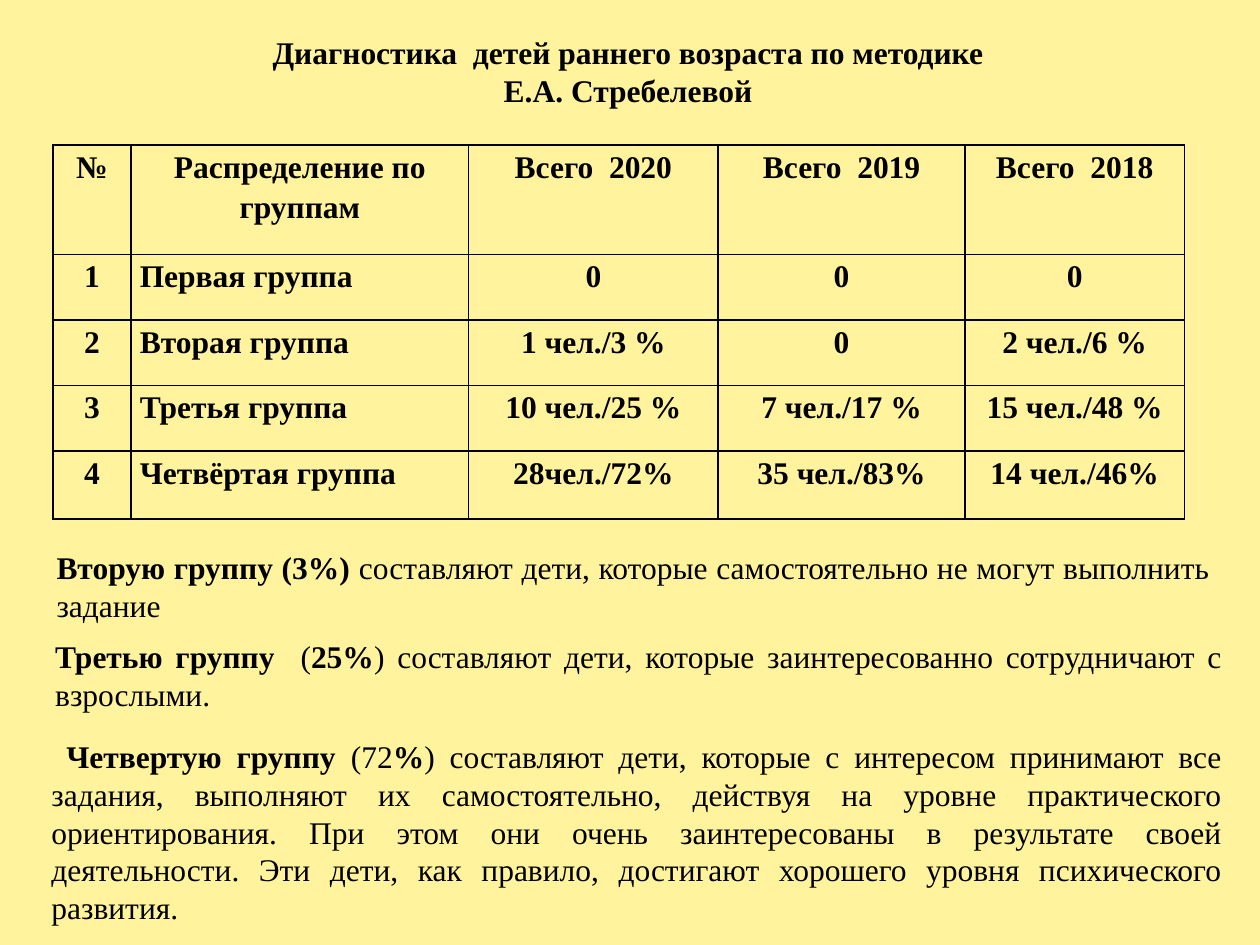
"""Builds a slide with early-childhood diagnostic results by group and year."""
import pptx
import pptx.dml.color
import pptx.enum.text
import pptx.oxml
import pptx.oxml.ns
import pptx.util
from pptx.util import Inches

BACKGROUND = pptx.dml.color.RGBColor(0xFF, 0xF3, 0x9D)
BLACK = pptx.dml.color.RGBColor(0, 0, 0)
FONT = "Times New Roman"
ALIGN = pptx.enum.text.PP_ALIGN
AUTO_SIZE = pptx.enum.text.MSO_AUTO_SIZE


def format_paragraph(paragraph, alignment, bold=None):
    paragraph.alignment = alignment
    paragraph.font.name = FONT
    paragraph.font.size = pptx.util.Pt(18)
    paragraph.font.bold = bold
    paragraph.font.color.rgb = BLACK


def add_borders(cell):
    properties = cell._tc.get_or_add_tcPr()
    for side in ("lnL", "lnR", "lnT", "lnB"):
        properties.append(pptx.oxml.parse_xml(
            f'<a:{side} {pptx.oxml.ns.nsdecls("a")} w="12700"><a:solidFill>'
            f'<a:srgbClr val="{BLACK}"/></a:solidFill></a:{side}>'))


presentation = pptx.Presentation()
presentation.slide_width = Inches(10)
presentation.slide_height = Inches(7.5)
slide = presentation.slides.add_slide(presentation.slide_layouts[5])
slide.background.fill.solid()
slide.background.fill.fore_color.rgb = BACKGROUND

title = slide.shapes.title
title.left, title.top = Inches(0.83), Inches(0.21)
title.width, title.height = Inches(8.31), Inches(0.71)
title.text_frame.text = "Диагностика  детей раннего возраста по методике\nЕ.А. Стребелевой"
title.text_frame.auto_size = AUTO_SIZE.SHAPE_TO_FIT_TEXT
title.text_frame.vertical_anchor = pptx.enum.text.MSO_ANCHOR.MIDDLE
for paragraph in title.text_frame.paragraphs:
    format_paragraph(paragraph, ALIGN.CENTER, True)

rows = [
    ("№", "Распределение по группам", "Всего  2020", "Всего  2019", "Всего  2018"),
    ("1", "Первая группа", "0", "0", "0"),
    ("2", "Вторая группа", "1 чел./3 %", "0", "2 чел./6 %"),
    ("3", "Третья группа", "10 чел./25 %", "7 чел./17 %", "15 чел./48 %"),
    ("4", "Четвёртая группа", "28чел./72%", "35 чел./83%", "14 чел./46%"),
]
column_widths = (0.62, 2.68, 1.98, 1.96, 1.74)
row_heights = (0.87, 0.52, 0.52, 0.52, 0.54)
table = slide.shapes.add_table(
    len(rows), len(column_widths), Inches(0.42), Inches(1.15), Inches(8.98), Inches(2.97)).table
table.horz_banding = False
for column, width in zip(table.columns, column_widths):
    column.width = Inches(width)
for row, height in zip(table.rows, row_heights):
    row.height = Inches(height)

for row_index, texts in enumerate(rows):
    for column_index, text in enumerate(texts):
        cell = table.cell(row_index, column_index)
        cell.text = text
        cell.margin_left = cell.margin_right = Inches(0.07)
        cell.margin_top = cell.margin_bottom = 0
        add_borders(cell)
        cell.fill.background()
        is_group_name = row_index > 0 and column_index == 1
        paragraph = cell.text_frame.paragraphs[0]
        format_paragraph(paragraph, ALIGN.LEFT if is_group_name else ALIGN.CENTER, True)
        paragraph.line_spacing = 1.15

group_notes = [
    ((0.35, 4.3, 9.35, 0.71), [
        ("Вторую группу (3%) ", True),
        ("составляют дети, которые самостоятельно не могут выполнить задание", False)]),
    ((0.34, 5.01, 9.46, 0.71), [
        ("Третью группу  ", True),
        ("(", False),
        ("25%", True),
        (") составляют дети, которые заинтересованно сотрудничают с взрослыми.", False)]),
    ((0.31, 5.8, 9.49, 1.62), [
        (" Четвертую группу ", True),
        ("(72", False),
        ("%", True),
        (") составляют дети, которые с интересом принимают все задания, выполняют их "
         "самостоятельно, действуя на уровне практического ориентирования. При этом они "
         "очень заинтересованы в результате своей деятельности. Эти дети, как правило, "
         "достигают хорошего уровня психического развития.", False)]),
]
for position, runs in group_notes:
    text_frame = slide.shapes.add_textbox(*map(Inches, position)).text_frame
    text_frame.word_wrap = True
    text_frame.auto_size = AUTO_SIZE.SHAPE_TO_FIT_TEXT
    paragraph = text_frame.paragraphs[0]
    format_paragraph(paragraph, ALIGN.JUSTIFY)
    for text, bold in runs:
        run = paragraph.add_run()
        run.text = text
        run.font.bold = bold

presentation.save("out.pptx")
